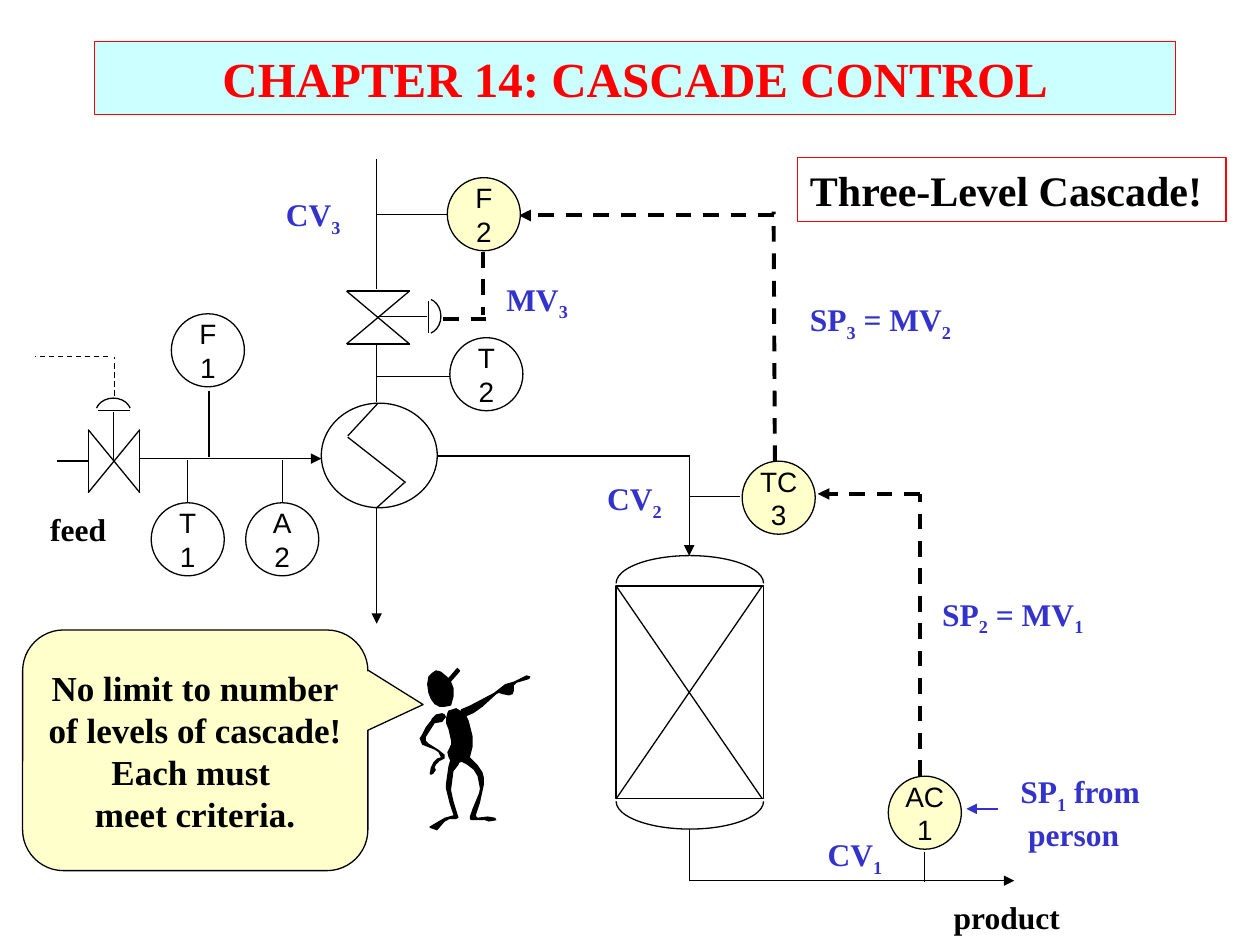
from dataclasses import dataclass

from lxml import etree
from pptx import Presentation
from pptx.dml.color import RGBColor
from pptx.enum.dml import MSO_LINE
from pptx.enum.shapes import MSO_CONNECTOR, MSO_SHAPE
from pptx.enum.text import MSO_ANCHOR, MSO_AUTO_SIZE, PP_ALIGN
from pptx.oxml.ns import qn
from pptx.util import Inches, Pt

STRAIGHT = MSO_CONNECTOR.STRAIGHT
RECTANGLE, OVAL, ARC = MSO_SHAPE.RECTANGLE, MSO_SHAPE.OVAL, MSO_SHAPE.ARC
CALLOUT = MSO_SHAPE.ROUNDED_RECTANGULAR_CALLOUT
DASH = MSO_LINE.DASH
TOP, MIDDLE = MSO_ANCHOR.TOP, MSO_ANCHOR.MIDDLE
LEFT, CENTER = PP_ALIGN.LEFT, PP_ALIGN.CENTER
NO_AUTOFIT = MSO_AUTO_SIZE.NONE

Point = tuple[float, float]
Box = tuple[float, float, float, float]


@dataclass(frozen=True)
class Theme:
    ink: str = "000000"
    red: str = "FF0000"
    blue: str = "3333CC"
    cyan: str = "CCFFFF"
    cream: str = "FFFFCC"
    serif: str = "Times New Roman"
    sans: str = "Arial"
    title: int = 28
    heading: int = 24
    speech: int = 20
    label: int = 18
    tag: int = 16
    thin: float = 0.75
    thick: float = 2.25
    bubble: float = 0.58


THEME = Theme()


@dataclass(frozen=True)
class Line:
    start: Point
    end: Point
    arrow: bool = False
    dashed: bool = False
    width: float = THEME.thin
    color: str = THEME.ink


@dataclass(frozen=True)
class Instrument:
    left: float
    top: float
    kind: str
    number: str
    cascade: bool = False


@dataclass(frozen=True)
class Label:
    box: Box
    lines: tuple[str, ...]
    color: str = THEME.blue


@dataclass(frozen=True)
class Valve:
    box: Box
    upright: bool
    stem: tuple[Point, Point]
    plate: tuple[Point, Point]
    cap: Box
    cap_angles: tuple[float, float]


VALVES = (
    Valve((2.75, 2.31, 0.5, 0.42), True, ((3, 2.51), (3.39, 2.51)),
          ((3.4, 2.39), (3.4, 2.64)), (3.27, 2.37, 0.23, 0.28), (285, 75)),
    Valve((0.7, 3.41, 0.41, 0.5), False, ((0.9, 3.66), (0.9, 3.27)),
          ((0.78, 3.26), (1.03, 3.26)), (0.76, 3.16, 0.28, 0.23), (195, 345)),
)

PIPES = (
    Line((5.47, 6.58), (5.47, 6.99)), Line((5.47, 6.99), (8.05, 6.99), arrow=True),
    Line((2.99, 4.03), (2.99, 4.95), arrow=True),
    Line((3, 3.2), (2.76, 3.46)), Line((2.76, 3.47), (3.22, 3.83)), Line((3.21, 3.83), (2.99, 4.03)),
    Line((2.99, 3.19), (2.99, 2.73)), Line((2.99, 2.29), (2.99, 1.26)),
    Line((3.48, 3.62), (5.48, 3.62)), Line((5.47, 3.62), (5.47, 4.41), arrow=True),
    Line((1.11, 3.64), (2.55, 3.64), arrow=True), Line((0.7, 3.66), (0.45, 3.66)),
)

TAPS = (
    Line((3.55, 1.7), (2.99, 1.7)), Line((3.57, 2.99), (2.99, 2.99)),
    Line((5.87, 3.94), (5.47, 3.94)), Line((7.34, 6.76), (7.34, 7)),
    Line((1.66, 3.1), (1.66, 3.63)), Line((1.49, 3.99), (1.49, 3.65)), Line((2.24, 3.99), (2.24, 3.65)),
)

SIGNALS = (
    Line((0.91, 3.14), (0.91, 2.83), dashed=True), Line((0.86, 2.83), (0.28, 2.83), dashed=True),
    Line((7.3, 6.16), (7.3, 3.92), dashed=True, width=THEME.thick),
    Line((7.3, 3.92), (6.49, 3.92), arrow=True, dashed=True, width=THEME.thick),
    Line((6.15, 3.66), (6.14, 1.68), dashed=True, width=THEME.thick),
    Line((6.14, 1.71), (4.12, 1.71), arrow=True, dashed=True, width=THEME.thick),
    Line((3.83, 2), (3.83, 2.5), dashed=True, width=THEME.thick),
    Line((3.86, 2.53), (3.52, 2.53), dashed=True, width=THEME.thick),
    Line((7.92, 6.42), (7.67, 6.42), arrow=True, color=THEME.blue),
)

INSTRUMENTS = (
    Instrument(7.05, 6.16, "AC", "1", True), Instrument(5.89, 3.66, "TC", "3", True),
    Instrument(3.57, 2.68, "T", "2"), Instrument(3.55, 1.41, "F", "2", True),
    Instrument(1.36, 2.49, "F", "1"), Instrument(1.2, 3.99, "T", "1"), Instrument(1.95, 3.99, "A", "2"),
)

LABELS = (
    Label((0.3, 4, 0.65, 0.4), ("feed",), THEME.ink), Label((7.47, 7.08, 1.05, 0.4), ("product",), THEME.ink),
    Label((8, 6.08, 1.17, 0.7), ("SP|1| from", " person")),
    Label((7.38, 4.67, 1.34, 0.4), ("SP|2| = MV|1",)), Label((6.33, 2.33, 1.34, 0.4), ("SP|3| = MV|2",)),
    Label((4.72, 3.75, 0.71, 0.4), ("CV|2",)), Label((6.47, 6.58, 0.71, 0.4), ("CV|1",)),
    Label((2.17, 1.5, 0.71, 0.4), ("CV|3",)), Label((3.92, 2.17, 0.7, 0.4), ("MV|3",)),
)

HEAD = ((3.56, 5.38), (3.5, 5.33), (3.46, 5.32), (3.43, 5.34), (3.4, 5.37), (3.39, 5.43), (3.4, 5.5),
        (3.42, 5.55), (3.45, 5.59), (3.49, 5.61), (3.53, 5.61), (3.58, 5.6), (3.6, 5.53), (3.6, 5.46),
        (3.58, 5.41), (3.65, 5.33), (3.65, 5.32), (3.63, 5.3), (3.62, 5.31))
POINTING_ARM = ((3.67, 5.68), (3.65, 5.66), (3.66, 5.63), (3.73, 5.6), (3.92, 5.5), (4.01, 5.43), (4.08, 5.41),
                (4.18, 5.36), (4.21, 5.37), (4.2, 5.39), (4.1, 5.42), (4.08, 5.44), (4.08, 5.48), (4.07, 5.51),
                (4.04, 5.52), (3.99, 5.51), (3.96, 5.5), (3.94, 5.51), (3.83, 5.61), (3.76, 5.66), (3.69, 5.69))
BENT_ARM = ((3.43, 5.7), (3.46, 5.67), (3.51, 5.66), (3.53, 5.67), (3.54, 5.69), (3.51, 5.73), (3.45, 5.74),
            (3.38, 5.85), (3.38, 5.88), (3.4, 5.9), (3.48, 5.95), (3.53, 5.99), (3.53, 6.02), (3.49, 6.04),
            (3.46, 6.07), (3.45, 6.09), (3.46, 6.11), (3.44, 6.14), (3.42, 6.15), (3.41, 6.14), (3.42, 6.09),
            (3.44, 6.05), (3.47, 6.02), (3.5, 6.01), (3.48, 5.97), (3.45, 5.95), (3.35, 5.91), (3.33, 5.86),
            (3.35, 5.83), (3.38, 5.77), (3.42, 5.72))
TORSO = ((3.56, 5.64), (3.62, 5.62), (3.67, 5.65), (3.7, 5.68), (3.72, 5.72), (3.75, 5.84), (3.75, 5.93),
         (3.73, 6.01), (3.68, 6.04), (3.63, 6.06), (3.6, 6.06), (3.58, 6.05), (3.56, 6.01), (3.55, 5.97),
         (3.58, 5.91), (3.58, 5.88), (3.56, 5.79), (3.54, 5.74), (3.54, 5.7), (3.55, 5.66))
RIGHT_LEG = ((3.66, 6.02), (3.66, 5.99), (3.69, 5.97), (3.7, 5.98), (3.79, 6.07), (3.83, 6.13), (3.84, 6.17),
             (3.84, 6.23), (3.81, 6.37), (3.78, 6.46), (3.78, 6.48), (3.79, 6.49), (3.87, 6.48), (3.93, 6.49),
             (3.94, 6.51), (3.88, 6.52), (3.85, 6.51), (3.74, 6.51), (3.73, 6.5), (3.73, 6.48), (3.75, 6.42),
             (3.8, 6.3), (3.81, 6.26), (3.79, 6.16), (3.76, 6.11), (3.71, 6.07), (3.67, 6.05))
LEFT_LEG = ((3.58, 6.01), (3.6, 6), (3.64, 6), (3.65, 6.02), (3.64, 6.07), (3.6, 6.12), (3.58, 6.27), (3.6, 6.36),
            (3.64, 6.49), (3.62, 6.5), (3.57, 6.5), (3.53, 6.52), (3.47, 6.59), (3.41, 6.57), (3.41, 6.56),
            (3.53, 6.49), (3.6, 6.47), (3.57, 6.38), (3.54, 6.26), (3.54, 6.22), (3.56, 6.08))


def rgb(color: str) -> RGBColor:
    return RGBColor.from_string(color)


def draw_line(slide, line: Line) -> None:
    connector = slide.shapes.add_connector(STRAIGHT, *map(Inches, line.start + line.end))
    connector.line.color.rgb = rgb(line.color)
    connector.line.width = Pt(line.width)
    if line.dashed:
        connector.line.dash_style = DASH
    if line.arrow:
        etree.SubElement(connector.line._get_or_add_ln(), qn("a:tailEnd"), type="triangle")
    etree.SubElement(connector._element.spPr, qn("a:effectLst"))


def style_shape(shape, fill: str | None, outline: str | None) -> None:
    for part, color in ((shape.fill, fill), (shape.line.fill, outline)):
        if color:
            part.solid()
            part.fore_color.rgb = rgb(color)
        else:
            part.background()
    if outline:
        shape.line.width = Pt(THEME.thin)


def draw_shape(slide, kind, box: Box, fill: str | None = None, outline: str = THEME.ink, adjustments=()):
    shape = slide.shapes.add_shape(kind, *map(Inches, box))
    shape.shadow.inherit = False
    style_shape(shape, fill, outline)
    for index, value in enumerate(adjustments):
        shape.adjustments[index] = value
    return shape


def draw_arc(slide, box: Box, start: float, end: float) -> None:
    draw_shape(slide, ARC, box, adjustments=(start * 0.6, end * 0.6))


def write(shape, lines: tuple[str, ...], size: int, color: str, font: str = THEME.serif,
          bold: bool = True, align=CENTER, anchor=MIDDLE, wrap: bool = False) -> None:
    frame = shape.text_frame
    frame.auto_size = NO_AUTOFIT
    frame.word_wrap = wrap
    frame.vertical_anchor = anchor
    for index, line in enumerate(lines):
        paragraph = frame.add_paragraph() if index else frame.paragraphs[0]
        paragraph.alignment = align
        paragraph.font.name, paragraph.font.size, paragraph.font.bold = font, Pt(size), bold
        paragraph.font.color.rgb = rgb(color)
        for position, piece in enumerate(line.split("|")):
            if piece:
                run = paragraph.add_run()
                run.text = piece
                if position % 2:
                    run.font._element.set("baseline", "-25000")


def draw_valve(slide, valve: Valve) -> None:
    left, top, width, height = valve.box
    right, bottom = left + width, top + height
    nw, ne, sw, se = (left, top), (right, top), (left, bottom), (right, bottom)
    ends = ((nw, ne), (sw, se)) if valve.upright else ((nw, sw), (ne, se))
    for start, end in (*ends, (nw, se), (ne, sw), valve.stem, valve.plate):
        draw_line(slide, Line(start, end))
    draw_arc(slide, valve.cap, *valve.cap_angles)


def draw_reactor(slide) -> None:
    draw_shape(slide, RECTANGLE, (4.89, 4.65, 1.17, 1.69))
    draw_line(slide, Line((6.05, 4.65), (4.89, 6.34)))
    draw_line(slide, Line((4.89, 4.65), (6.05, 6.34)))
    draw_arc(slide, (4.89, 4.41, 1.17, 0.44), 180, 0)
    draw_arc(slide, (4.89, 6.14, 1.17, 0.44), 0, 180)


def draw_limb(slide, outline: tuple[Point, ...]) -> None:
    first, *rest = [(Inches(x), Inches(y)) for x, y in outline]
    builder = slide.shapes.build_freeform(*first)
    builder.add_line_segments(rest, close=True)
    limb = builder.convert_to_shape()
    limb.shadow.inherit = False
    style_shape(limb, THEME.ink, None)


def main() -> None:
    deck = Presentation()
    deck.slide_width, deck.slide_height = Inches(10), Inches(7.5)
    slide = deck.slides.add_slide(deck.slide_layouts[5])

    title = slide.shapes.title
    title.left, title.top, title.width, title.height = map(Inches, (0.75, 0.33, 8.58, 0.58))
    style_shape(title, THEME.cyan, THEME.red)
    write(title, ("CHAPTER 14: CASCADE CONTROL",), THEME.title, THEME.red, wrap=True)

    draw_reactor(slide)
    draw_shape(slide, OVAL, (2.55, 3.2, 0.92, 0.83))
    for valve in VALVES:
        draw_valve(slide, valve)
    for line in PIPES + TAPS + SIGNALS:
        draw_line(slide, line)
    for item in INSTRUMENTS:
        bubble = draw_shape(slide, OVAL, (item.left, item.top, THEME.bubble, THEME.bubble),
                            THEME.cream if item.cascade else None)
        write(bubble, (item.kind, item.number), THEME.tag, THEME.ink, THEME.sans, bold=False)
    for label in LABELS:
        box = slide.shapes.add_textbox(*map(Inches, label.box))
        write(box, label.lines, THEME.label, label.color, align=LEFT, anchor=TOP)

    speech = draw_shape(slide, CALLOUT, (0.18, 5, 2.74, 1.91), THEME.cream, adjustments=(0.66, -0.19, 0.17))
    write(speech, ("No limit to number", "of levels of cascade!", "Each must ", "meet criteria."),
          THEME.speech, THEME.ink)
    for limb in (HEAD, POINTING_ARM, BENT_ARM, TORSO, RIGHT_LEG, LEFT_LEG):
        draw_limb(slide, limb)

    heading = draw_shape(slide, RECTANGLE, (6.33, 1.25, 3.4, 0.51), outline=THEME.red)
    write(heading, ("Three-Level Cascade!",), THEME.heading, THEME.ink, align=LEFT, wrap=True)
    deck.save("out.pptx")


if __name__ == "__main__":
    main()
